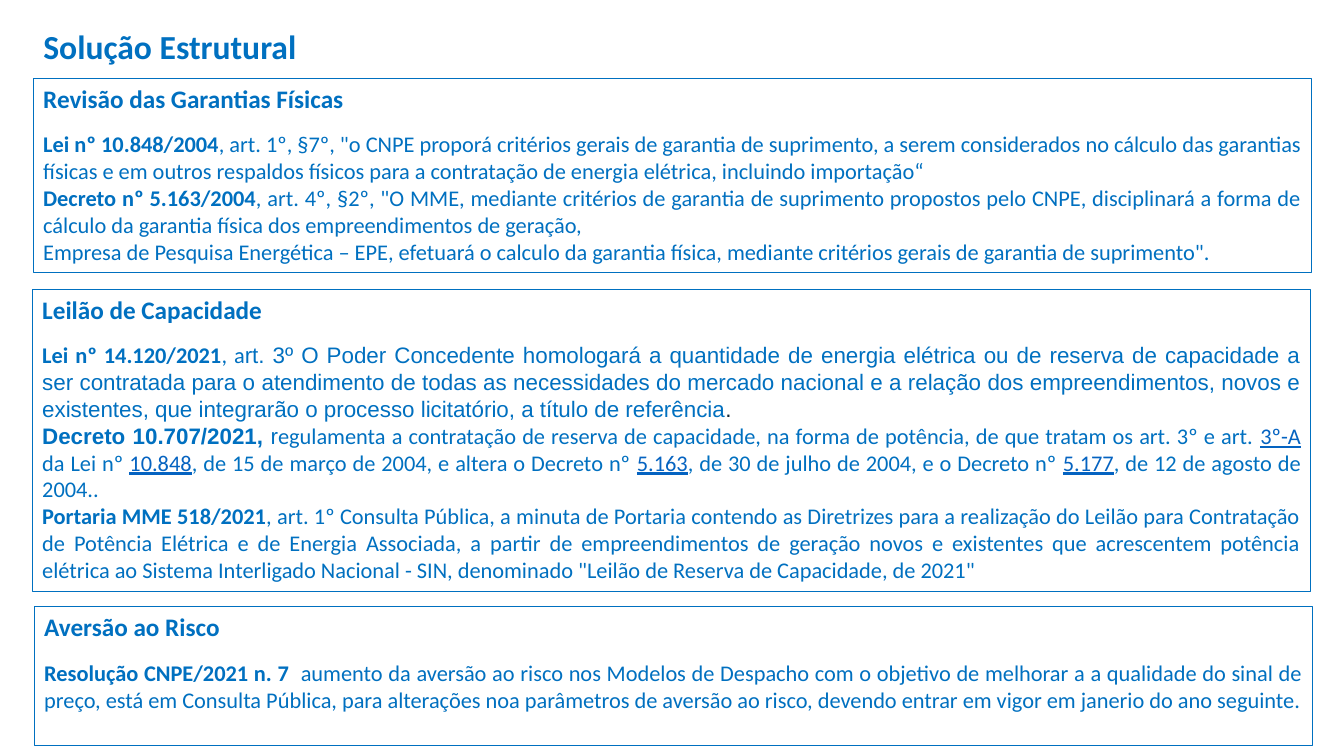
"""Build the slide on structural solutions with its three bordered legal boxes."""
from dataclasses import dataclass

from pptx import Presentation
from pptx import util as u
from pptx.dml import color
from pptx.enum import shapes, text

BLUE = "0070C0"
LINK_BLUE = "0563C1"
DARK = "162937"
BODY_SIZE = 16
BOX_WIDTH = 12.68


@dataclass(frozen=True)
class Piece:
    words: str
    bold: bool = False
    font: str = "Calibri"
    colour: str = BLUE
    underline: bool = False


@dataclass(frozen=True)
class Box:
    left: float
    top: float
    height: float
    heading: str
    paragraphs: list[list[Piece]]


def strong(words: str, font: str = "Calibri") -> Piece:
    return Piece(words, bold=True, font=font)


def reference(words: str) -> Piece:
    return Piece(words, colour=LINK_BLUE, underline=True)


BOXES = [
    Box(0.33, 0.78, 1.92, "Revisão das Garantias Físicas", [
        [strong("Lei nº 10.848/2004"),
         Piece(', art. 1º, §7º, "o CNPE proporá critérios gerais de garantia de suprimento, '
               "a serem considerados no cálculo das garantias físicas e em outros respaldos "
               "físicos para a contratação de energia elétrica, incluindo importação“")],
        [strong("Decreto nº 5.163/2004"),
         Piece(', art. 4º, §2º, "O MME, mediante critérios de garantia de suprimento '
               "propostos pelo CNPE, disciplinará a forma de cálculo da garantia física dos "
               "empreendimentos de geração,")],
        [Piece("Empresa de Pesquisa Energética – EPE, efetuará o calculo da garantia física, "
               'mediante critérios gerais de garantia de suprimento".')],
    ]),
    Box(0.32, 2.87, 3.0, "Leilão de Capacidade", [
        [strong("Lei nº 14.120/2021"),
         Piece(", a"),
         Piece("rt. 3º O Poder Concedente homologará a quantidade de energia elétrica ou de "
               "reserva de capacidade a ser contratada para o atendimento de todas as "
               "necessidades do mercado nacional e a relação dos empreendimentos, novos e "
               "existentes, que integrarão o processo licitatório, a título de referência",
               font="Arial"),
         Piece(".", font="Arial", colour=DARK)],
        [strong("Decreto 10.707/2021,", font="Arial"),
         Piece(" r", font="Arial"),
         Piece("egulamenta a contratação de reserva de capacidade, na forma de potência, "
               "de que tratam os art. 3º e art. "),
         reference("3º-A"),
         Piece(" da Lei nº "),
         reference("10.848"),
         Piece(", de 15 de março de 2004, e altera o Decreto nº "),
         reference("5.163"),
         Piece(", de 30 de julho de 2004, e o Decreto nº "),
         reference("5.177"),
         Piece(", de 12 de agosto de 2004..")],
        [strong("Portaria MME 518/2021"),
         Piece(", art. 1º Consulta Pública, a minuta de Portaria contendo as Diretrizes para "
               "a realização do Leilão para Contratação de Potência Elétrica e de Energia "
               "Associada, a partir de empreendimentos de geração novos e existentes que "
               "acrescentem potência elétrica ao Sistema Interligado Nacional - SIN, "
               'denominado "Leilão de Reserva de Capacidade, de 2021"')],
    ]),
    Box(0.34, 6.02, 1.38, "Aversão ao Risco", [
        [strong("Resolução CNPE/2021 n. 7  "),
         Piece("aumento da aversão ao risco nos Modelos de Despacho com o objetivo de "
               "melhorar a a qualidade do sinal de preço, está em Consulta Pública, para "
               "alterações noa parâmetros de aversão ao risco, devendo entrar em vigor em "
               "janerio do ano seguinte.")],
    ]),
]


def rgb(value: str) -> color.RGBColor:
    return color.RGBColor.from_string(value)


def add_piece(paragraph, piece: Piece, size: float) -> None:
    run = paragraph.add_run()
    run.text = piece.words
    run.font.name = piece.font
    run.font.size = u.Pt(size)
    run.font.bold = piece.bold
    run.font.underline = piece.underline
    run.font.color.rgb = rgb(piece.colour)


def set_title(slide, words: str) -> None:
    title = slide.shapes.title
    title.left, title.top = u.Inches(0.33), u.Inches(0.21)
    title.width, title.height = u.Inches(3.12), u.Inches(0.5)
    frame = title.text_frame
    frame.word_wrap = False
    frame.auto_size = text.MSO_AUTO_SIZE.NONE
    frame.vertical_anchor = text.MSO_ANCHOR.TOP
    paragraph = frame.paragraphs[0]
    paragraph.alignment = text.PP_ALIGN.LEFT
    add_piece(paragraph, strong(words), 24)


def add_box(slide, box: Box) -> None:
    shape = slide.shapes.add_shape(
        shapes.MSO_SHAPE.RECTANGLE, u.Inches(box.left), u.Inches(box.top),
        u.Inches(BOX_WIDTH), u.Inches(box.height))
    shape.shadow.inherit = False
    shape.fill.background()
    shape.line.color.rgb = rgb(BLUE)
    shape.line.width = u.Pt(0.75)
    frame = shape.text_frame
    frame.word_wrap = True
    frame.vertical_anchor = text.MSO_ANCHOR.TOP
    heading = frame.paragraphs[0]
    heading.alignment = text.PP_ALIGN.JUSTIFY
    heading.space_after = u.Pt(12)
    add_piece(heading, strong(box.heading), 18)
    for pieces in box.paragraphs:
        paragraph = frame.add_paragraph()
        paragraph.alignment = text.PP_ALIGN.JUSTIFY
        for piece in pieces:
            add_piece(paragraph, piece, BODY_SIZE)


def main() -> None:
    presentation = Presentation()
    presentation.slide_width = u.Inches(13.33)
    presentation.slide_height = u.Inches(7.5)
    slide = presentation.slides.add_slide(presentation.slide_layouts.get_by_name("Title Only"))
    set_title(slide, "Solução Estrutural")
    for box in BOXES:
        add_box(slide, box)
    presentation.save("out.pptx")


if __name__ == "__main__":
    main()
